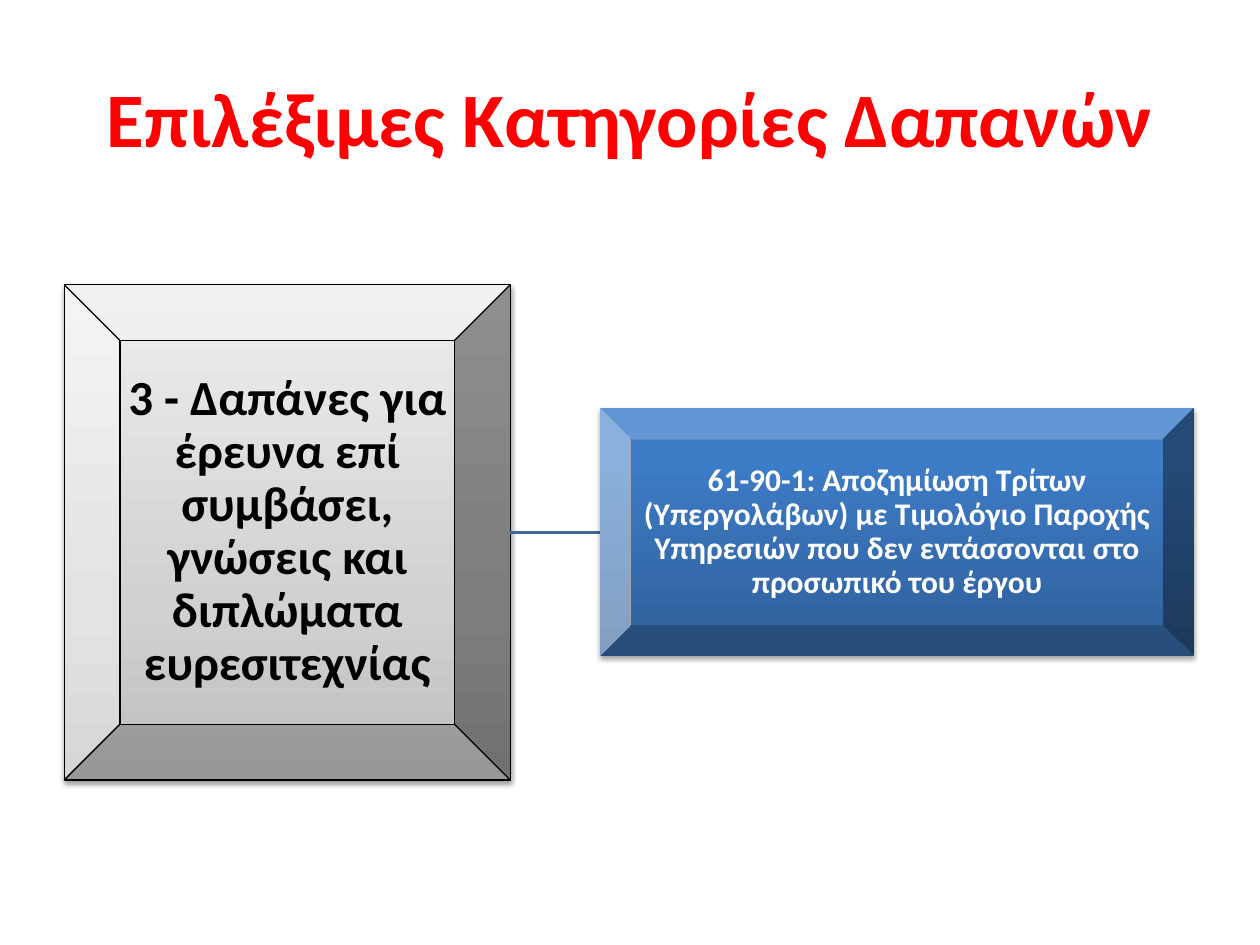
from copy import deepcopy

from pptx import Presentation
from pptx.dml.color import RGBColor as Rgb
from pptx.enum.shapes import MSO_CONNECTOR as Line, MSO_SHAPE as Kind
from pptx.enum.text import MSO_ANCHOR as Anchor, PP_ALIGN as Align
from pptx.oxml import parse_xml
from pptx.oxml.ns import nsdecls
from pptx.util import Pt

THEME = {
    "title": {"size": 44, "color": "FF0000"},
    "group": {"size": 28, "color": "000000"},
    "item": {"size": 18, "color": "FFFFFF"},
    "link": "3F6797",
    "edge": "000000",
    "font": "Calibri",
}

TITLE = {"text": "Επιλέξιμες Κατηγορίες Δαπανών", "at": (36, 21.6, 648, 90)}
PANELS = [
    {
        "text": "3 - Δαπάνες για έρευνα επί συμβάσει, γνώσεις και "
                "διπλώματα ευρεσιτεχνίας",
        "style": "group", "at": (36.7, 162.7, 254.9, 283), "pad": 1.4,
        "stops": [(0, "BDBDBD"), (0.35, "D1D1D1"), (1, "EEEEEE")],
        "edge": 0.75, "shade": (38, 1.6),
    },
    {
        "text": "61-90-1: Αποζημίωση Τρίτων (Υπεργολάβων) με Τιμολόγιο "
                "Παροχής Υπηρεσιών που δεν εντάσσονται στο προσωπικό του έργου",
        "style": "item", "at": (342.7, 233.3, 339.8, 141.8), "pad": 0.7,
        "stops": [(0, "2F5F99"), (0.8, "3D7CC7"), (1, "3A7CCB")],
        "edge": 0, "shade": (35, 1.8),
    },
]


def put(obj, values):
    for name, value in values.items():
        setattr(obj, name, value)


def add_text(slide, text, at, style, pad=None, lead=None):
    box = slide.shapes.add_textbox(*map(Pt, at))
    frame = box.text_frame
    put(frame, {"word_wrap": True, "vertical_anchor": Anchor.MIDDLE})
    if pad is not None:
        sides = ("left", "top", "right", "bottom")
        put(frame, {f"margin_{side}": Pt(pad) for side in sides})
    para = frame.paragraphs[0]
    put(para, {"alignment": Align.CENTER, "line_spacing": lead})
    run = para.add_run()
    run.text = text
    look = THEME[style]
    put(run.font, {"name": THEME["font"], "size": Pt(look["size"]), "bold": True})
    run.font.color.rgb = Rgb.from_string(look["color"])


def add_shade(shape, alpha, gap):
    """Add a soft black shadow that falls straight down."""
    shape.shadow.inherit = False
    shape._element.spPr.find("{*}effectLst").append(parse_xml(
        f'<a:outerShdw {nsdecls("a")} blurRad="{Pt(3.1)}" dist="{Pt(gap)}" '
        f'dir="5400000" rotWithShape="0"><a:srgbClr val="000000">'
        f'<a:alpha val="{alpha * 1000}"/></a:srgbClr></a:outerShdw>'))


def paint(shape, stops):
    """Fill with a gradient that runs from bottom to top."""
    fill = shape.fill
    fill.gradient()
    fill.gradient_angle = 90
    nodes = shape._element.spPr.find("{*}gradFill/{*}gsLst")
    nodes.append(deepcopy(nodes[0]))
    for stop, (place, color) in zip(fill.gradient_stops, stops):
        stop.position = place
        stop.color.rgb = Rgb.from_string(color)


def add_panel(slide, panel):
    left, top, width, height = panel["at"]
    shape = slide.shapes.add_shape(Kind.BEVEL, *map(Pt, panel["at"]))
    paint(shape, panel["stops"])
    if panel["edge"]:
        shape.line.color.rgb = Rgb.from_string(THEME["edge"])
        shape.line.width = Pt(panel["edge"])
    else:
        shape.line.fill.background()
    add_shade(shape, *panel["shade"])
    rim = min(width, height) / 8
    inner = (left + rim, top + rim, width - 2 * rim, height - 2 * rim)
    add_text(slide, panel["text"], inner, panel["style"], panel["pad"], 0.9)


def add_link(slide, start, end):
    """Join the right side of one panel to the left side of the next."""
    left, top, width, height = start["at"]
    mid = Pt(top + height / 2)
    link = slide.shapes.add_connector(
        Line.STRAIGHT, Pt(left + width), mid, Pt(end["at"][0]), mid)
    link.line.color.rgb = Rgb.from_string(THEME["link"])
    link.line.width = Pt(2)
    link._element.spPr.append(parse_xml(f'<a:effectLst {nsdecls("a")}/>'))


def main():
    deck = Presentation()
    put(deck, {"slide_width": Pt(720), "slide_height": Pt(540)})
    slide = deck.slides.add_slide(deck.slide_layouts[6])
    add_text(slide, TITLE["text"], TITLE["at"], "title")
    group, item = PANELS
    add_panel(slide, group)
    add_link(slide, group, item)
    add_panel(slide, item)
    deck.save("out.pptx")


if __name__ == "__main__":
    main()
